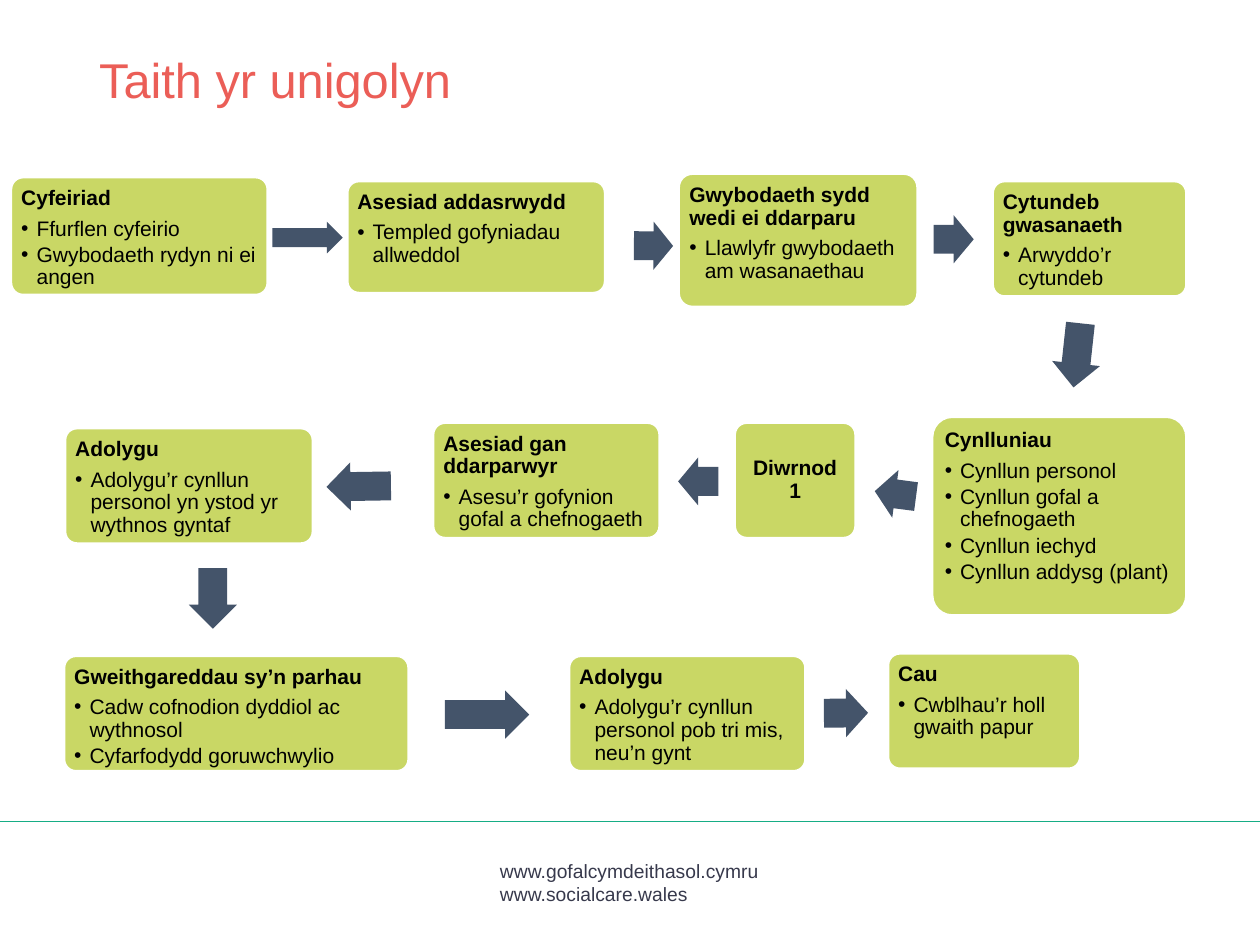
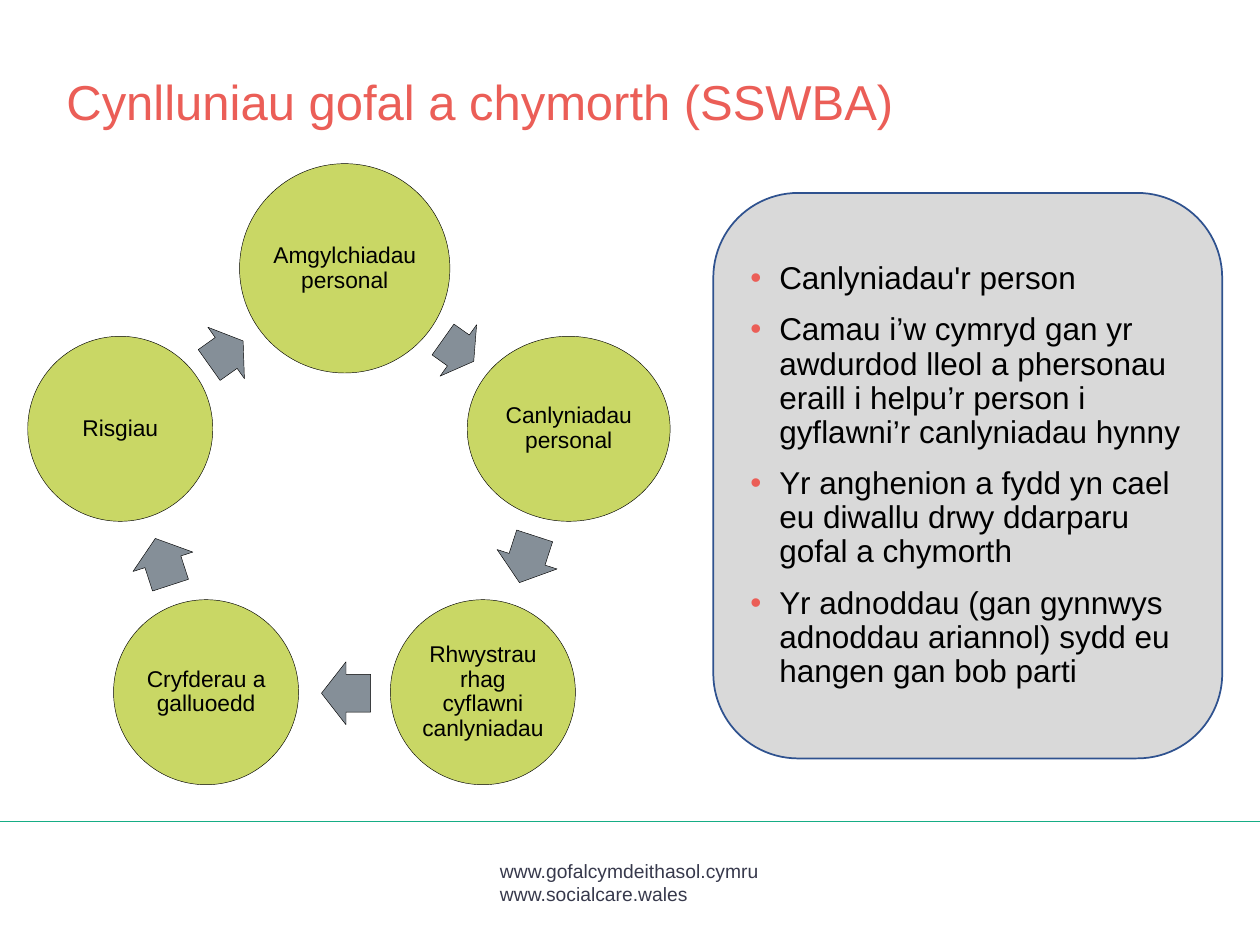
from lxml import etree
from pptx import Presentation, util as u
from pptx.dml.color import RGBColor
from pptx.enum import shapes, text
from pptx.oxml.ns import qn

CORAL = RGBColor(0xEB, 0x5E, 0x57)
TEAL = RGBColor(0x16, 0xAD, 0x85)
LIME = RGBColor(0xC9, 0xD7, 0x65)
SLATE = RGBColor(0x44, 0x54, 0x6A)
STEEL = RGBColor(0x85, 0x8F, 0x98)
PALE_GREY = RGBColor(0xD9, 0xD9, 0xD9)
NAVY = RGBColor(0x2F, 0x52, 0x8F)
INK = RGBColor(0x37, 0x39, 0x4C)
BLACK = RGBColor(0, 0, 0)
WHITE = RGBColor(0xFF, 0xFF, 0xFF)

KIND = shapes.MSO_SHAPE
TOP, MIDDLE = text.MSO_ANCHOR.TOP, text.MSO_ANCHOR.MIDDLE
LEFT, CENTRE = text.PP_ALIGN.LEFT, text.PP_ALIGN.CENTER

WEB_ADDRESSES = ("www.gofalcymdeithasol.cymru", "www.socialcare.wales")

# Left, top, width, height in cm; heading; points
JOURNEY_STEPS = [
    ((0.23, 3.58, 5.16, 2.36), "Cyfeiriad",
     ["Ffurflen cyfeirio", "Gwybodaeth rydyn ni ei angen"]),
    ((7.01, 3.66, 5.18, 2.24), "Asesiad addasrwydd", ["Templed gofyniadau allweddol"]),
    ((13.69, 3.51, 4.8, 2.67), "Gwybodaeth sydd wedi ei ddarparu",
     ["Llawlyfr gwybodaeth am wasanaethau"]),
    ((20.02, 3.66, 3.89, 2.31), "Cytundeb gwasanaeth", ["Arwyddo’r cytundeb"]),
    ((18.8, 8.41, 5.11, 3.99), "Cynlluniau",
     ["Cynllun personol", "Cynllun gofal a chefnogaeth", "Cynllun iechyd",
      "Cynllun addysg (plant)"]),
    ((14.82, 8.53, 2.42, 2.31), "Diwrnod 1", []),
    ((8.74, 8.53, 4.55, 2.31), "Asesiad gan ddarparwyr",
     ["Asesu’r gofynion gofal a chefnogaeth"]),
    ((1.32, 8.64, 4.98, 2.31), "Adolygu",
     ["Adolygu’r cynllun personol yn ystod yr wythnos gyntaf"]),
    ((1.3, 13.23, 6.93, 2.31), "Gweithgareddau sy’n parhau",
     ["Cadw cofnodion dyddiol ac wythnosol", "Cyfarfodydd goruwchwylio"]),
    ((11.48, 13.23, 4.75, 2.31), "Adolygu",
     ["Adolygu’r cynllun personol pob tri mis, neu’n gynt"]),
    ((17.91, 13.18, 3.86, 2.31), "Cau", ["Cwblhau’r holl gwaith papur"]),
]

# Left, top, width, height in cm; rotation in degrees
JOURNEY_ARROWS = [
    ((5.49, 4.47, 1.42, 0.64), 0),
    ((12.78, 4.47, 0.79, 0.97), 0.5),
    ((18.82, 4.34, 0.81, 0.97), 0),
    ((21.06, 6.68, 1.3, 0.97), 96.2),
    ((17.63, 9.47, 0.84, 0.97), 187.5),
    ((13.67, 9.22, 0.81, 0.97), 180),
    ((6.58, 9.32, 1.3, 0.97), 179.1),
    ((3.68, 11.58, 1.22, 0.97), 90),
    ((8.97, 13.92, 1.7, 0.97), 0),
    ((16.61, 13.89, 0.89, 0.97), 359.5),
]

PLAN_TOPICS = [
    ((4.83, 3.3, 4.24, 4.22), "Amgylchiadau personal"),
    ((9.42, 6.78, 4.09, 3.73), "Canlyniadau personal"),
    ((7.87, 12.09, 3.73, 3.73), "Rhwystrau rhag cyflawni canlyniadau"),
    ((2.29, 12.09, 3.73, 3.73), "Cryfderau a galluoedd"),
    ((0.56, 6.78, 3.73, 3.73), "Risgiau"),
]

PLAN_ARROWS = [
    ((8.86, 6.43, 0.76, 1.27), 35.4),
    ((10.13, 10.64, 0.99, 1.27), 108),
    ((6.48, 13.34, 0.99, 1.27), 180),
    ((2.79, 10.69, 0.99, 1.27), 252),
    ((4.14, 6.48, 0.84, 1.27), 324.6),
]

PLAN_CONTENTS = [
    "Canlyniadau'r person",
    "Camau i’w cymryd gan yr awdurdod lleol a phersonau eraill i helpu’r person "
    "i gyflawni’r canlyniadau hynny",
    "Yr anghenion a fydd yn cael eu diwallu drwy ddarparu gofal a chymorth",
    "Yr adnoddau (gan gynnwys adnoddau ariannol) sydd eu hangen gan bob parti",
]


def cm(lengths):
    return [u.Cm(length) for length in lengths]


class Deck:
    """Holds the shared style and the slide being filled."""

    font = "Arial"

    def __init__(self):
        self.prs = Presentation()
        self.prs.slide_width, self.prs.slide_height = cm((25.4, 19.05))
        self.slide = None

    def new_slide(self, title, title_box, title_size):
        self.slide = self.prs.slides.add_slide(self.prs.slide_layouts[6])
        self.footer()
        frame = self.text_box(title_box)
        self.paragraph(frame, title, title_size, CORAL, spacing=0.9)

    def footer(self):
        frame = self.text_box((9.83, 17.2, 5.9, 1.17))
        for address in WEB_ADDRESSES:
            self.paragraph(frame, address, 11, INK)
        rule = self.slide.shapes.add_connector(
            shapes.MSO_CONNECTOR.STRAIGHT, *cm((0, 16.56, 25.4, 16.56)))
        rule.line.color.rgb = TEAL
        rule.line.width = u.Pt(1)
        etree.SubElement(rule.element.spPr, qn("a:effectLst"))

    def text_box(self, box):
        frame = self.slide.shapes.add_textbox(*cm(box)).text_frame
        frame.word_wrap = True
        return frame

    def shape(self, kind, box, fill, line=None, line_width=1.0, adjustments=()):
        shape = self.slide.shapes.add_shape(kind, *cm(box))
        shape.shadow.inherit = False
        shape.fill.solid()
        shape.fill.fore_color.rgb = fill
        if line is None:
            shape.line.fill.background()
        else:
            shape.line.color.rgb = line
            shape.line.width = u.Pt(line_width)
        for index, value in enumerate(adjustments):
            shape.adjustments[index] = value
        return shape

    def frame_in(self, shape, anchor, inset=None):
        frame = shape.text_frame
        frame.word_wrap = True
        frame.vertical_anchor = anchor
        if inset is not None:
            frame.margin_left = frame.margin_right = u.Cm(inset)
            frame.margin_top = frame.margin_bottom = u.Cm(inset)
        return frame

    def paragraph(self, frame, words, size, colour=BLACK, bold=False, align=LEFT,
                  spacing=1.0, before=0, after=0, indent=None, bullet_colour=None):
        """Adds one paragraph; an indent in cm makes it a bullet."""
        first = frame.paragraphs[0]
        is_first = not first.runs
        para = first if is_first else frame.add_paragraph()
        para.alignment = align
        para.line_spacing = spacing
        para.space_before = u.Pt(0 if is_first else before)
        para.space_after = u.Pt(after)
        if indent is not None:
            self.bullet(para, indent, bullet_colour)
        run = para.add_run()
        run.text = words
        run.font.name = self.font
        run.font.size = u.Pt(size)
        run.font.bold = bold
        run.font.color.rgb = colour

    def bullet(self, para, indent, colour):
        props = para._p.get_or_add_pPr()
        props.set("marL", str(u.Cm(indent)))
        props.set("indent", str(-u.Cm(indent)))
        if colour is not None:
            tint = etree.SubElement(props, qn("a:buClr"))
            etree.SubElement(tint, qn("a:srgbClr"), val=str(colour))
        etree.SubElement(props, qn("a:buFont"), typeface=self.font)
        etree.SubElement(props, qn("a:buChar"), char="•")

    def arrow(self, box, rotation, fill, line=None):
        arrow = self.shape(KIND.RIGHT_ARROW, box, fill, line, 0.25, (0.6, 0.5))
        arrow.rotation = rotation

    def step(self, box, heading, points):
        """Draws a journey step; one without points has its heading centred."""
        card = self.shape(KIND.ROUNDED_RECTANGLE, box, LIME, WHITE, adjustments=(0.1,))
        frame = self.frame_in(card, TOP if points else MIDDLE, 0.13)
        self.paragraph(frame, heading, 12, bold=True, align=LEFT if points else CENTRE,
                       spacing=0.9, after=4.5)
        for point in points:
            self.paragraph(frame, point, 12, spacing=0.9, after=2, indent=0.31)

    def topic(self, box, label):
        circle = self.shape(KIND.OVAL, box, LIME, BLACK, 0.25)
        frame = self.frame_in(circle, MIDDLE, 0.04)
        self.paragraph(frame, label, 13, align=CENTRE, spacing=0.9)

    def panel(self, box, points):
        card = self.shape(KIND.ROUNDED_RECTANGLE, box, PALE_GREY, NAVY)
        frame = self.frame_in(card, MIDDLE)
        for point in points:
            self.paragraph(frame, point, 18, spacing=0.9, before=10, indent=0.58,
                           bullet_colour=CORAL)


def main():
    deck = Deck()

    deck.new_slide("Taith yr unigolyn", (1.75, 1.02, 10.24, 1.8), 27.9)
    for step in JOURNEY_STEPS:
        deck.step(*step)
    for box, rotation in JOURNEY_ARROWS:
        deck.arrow(box, rotation, SLATE)

    deck.new_slide("Cynlluniau gofal a chymorth (SSWBA)", (1.09, 1.45, 19.86, 2.87), 28)
    for topic in PLAN_TOPICS:
        deck.topic(*topic)
    for box, rotation in PLAN_ARROWS:
        deck.arrow(box, rotation, STEEL, BLACK)
    deck.panel((14.38, 3.89, 10.26, 11.4), PLAN_CONTENTS)

    deck.prs.save("out.pptx")


if __name__ == "__main__":
    main()
